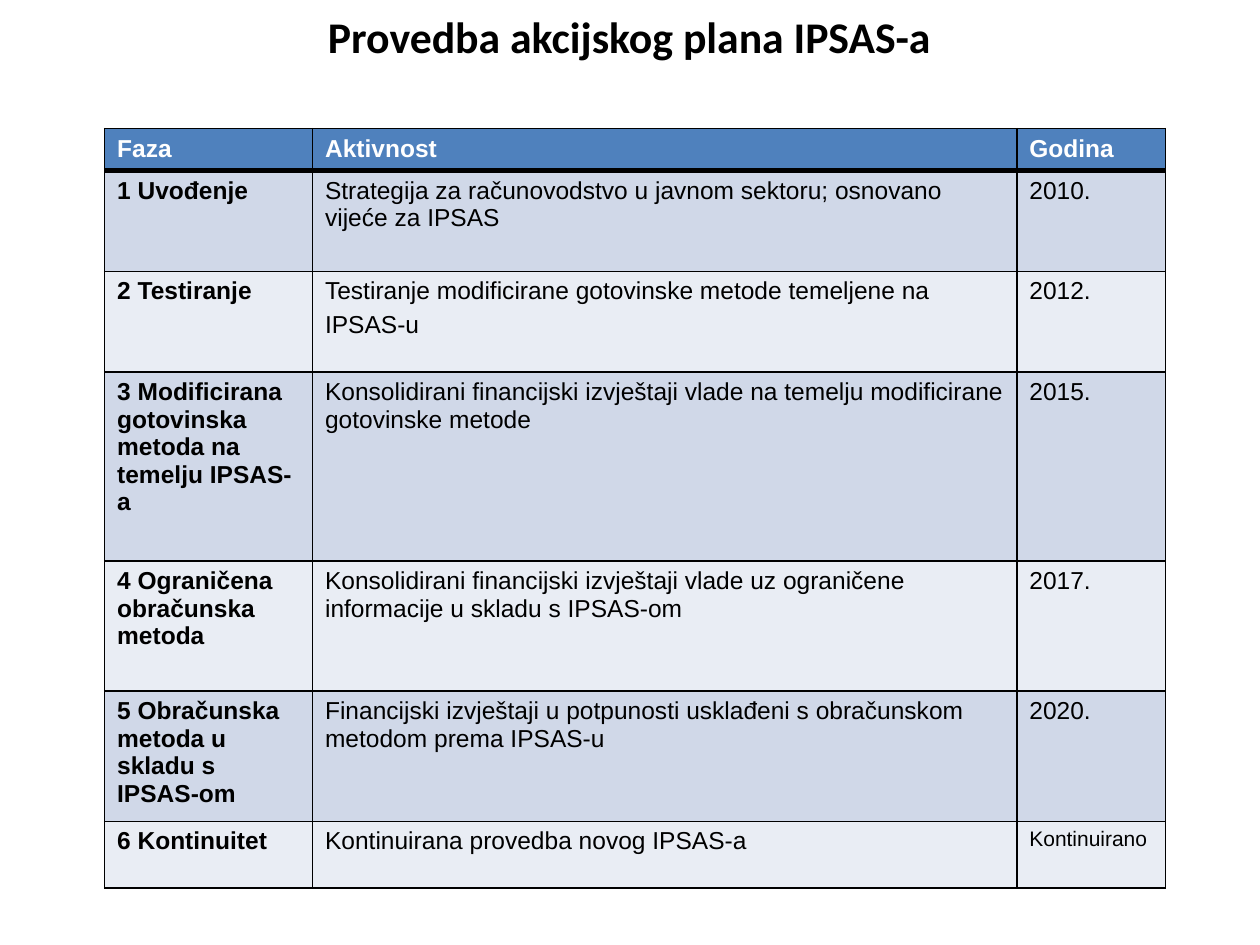
from lxml import etree
from pptx import Presentation
from pptx.dml.color import RGBColor
from pptx.enum import text as t
from pptx.oxml import ns
from pptx.util import Inches, Pt

BLACK = RGBColor(0x00, 0x00, 0x00)
WHITE = RGBColor(0xFF, 0xFF, 0xFF)
HEADER_BLUE = RGBColor(0x4F, 0x81, 0xBD)
BANDS = [RGBColor(0xE9, 0xED, 0xF4), RGBColor(0xD0, 0xD8, 0xE8)]

COLUMN_WIDTHS = [1.65, 5.59, 1.18]
ROW_HEIGHTS = [0.33, 0.8, 0.8, 1.5, 1.03, 1.03, 0.53]
ROWS = [
    ("Faza", "Aktivnost", "Godina"),
    ("1 Uvođenje",
     "Strategija za računovodstvo u javnom sektoru; osnovano vijeće za IPSAS", "2010."),
    ("2 Testiranje",
     "Testiranje modificirane gotovinske metode temeljene na IPSAS-u", "2012."),
    ("3 Modificirana gotovinska metoda na temelju IPSAS-a",
     "Konsolidirani financijski izvještaji vlade na temelju modificirane gotovinske metode",
     "2015."),
    ("4 Ograničena obračunska metoda",
     "Konsolidirani financijski izvještaji vlade uz ograničene informacije u skladu s IPSAS-om",
     "2017."),
    ("5 Obračunska metoda u skladu s IPSAS-om",
     "Financijski izvještaji u potpunosti usklađeni s obračunskom metodom prema IPSAS-u",
     "2020."),
    ("6 Kontinuitet", "Kontinuirana provedba novog IPSAS-a", "Kontinuirano"),
]


def write(paragraph, words, font="Arial", size=14, bold=False, color=BLACK):
    run = paragraph.add_run()
    run.text = words
    run.font.name = font
    run.font.size = Pt(size)
    run.font.bold = bold
    run.font.color.rgb = color


def add_borders(cell, **widths):
    """Draw black cell borders; keys are L, R, T and B, widths are in points."""
    properties = cell._tc.get_or_add_tcPr()
    for side, width in widths.items():
        line = etree.SubElement(properties, ns.qn(f"a:ln{side}"), w=str(Pt(width)))
        fill = etree.SubElement(line, ns.qn("a:solidFill"))
        etree.SubElement(fill, ns.qn("a:srgbClr"), val=str(BLACK))


presentation = Presentation()
presentation.slide_width = Inches(10)
presentation.slide_height = Inches(7.5)
slide = presentation.slides.add_slide(presentation.slide_layouts[6])

title = slide.shapes.add_textbox(Inches(0.58), Inches(0.03), Inches(8.83), Inches(0.94))
title.text_frame.word_wrap = True
title.text_frame.vertical_anchor = t.MSO_ANCHOR.TOP
title_paragraph = title.text_frame.paragraphs[0]
title_paragraph.alignment = t.PP_ALIGN.CENTER
write(title_paragraph, "Provedba akcijskog plana IPSAS-a", font="Calibri", size=25, bold=True)

table = slide.shapes.add_table(
    len(ROWS), len(COLUMN_WIDTHS), Inches(0.83), Inches(1.02),
    Inches(sum(COLUMN_WIDTHS)), Inches(sum(ROW_HEIGHTS))).table
for column, width in zip(table.columns, COLUMN_WIDTHS):
    column.width = Inches(width)
for row, height in zip(table.rows, ROW_HEIGHTS):
    row.height = Inches(height)

for row_index, row_texts in enumerate(ROWS):
    is_header = row_index == 0
    for column_index, words in enumerate(row_texts):
        cell = table.cell(row_index, column_index)
        add_borders(cell, L=1, R=1, T=3 if row_index == 1 else 1, B=3 if is_header else 1)
        cell.fill.solid()
        cell.fill.fore_color.rgb = HEADER_BLUE if is_header else BANDS[row_index % 2]
        write(cell.text_frame.paragraphs[0], words,
              size=12 if words == "Kontinuirano" else 14,
              bold=is_header or column_index == 0,
              color=WHITE if is_header else BLACK)

# The larger closing space makes the last line of this cell taller.
write(table.cell(2, 1).text_frame.paragraphs[0], " ", size=18)

presentation.save("out.pptx")
